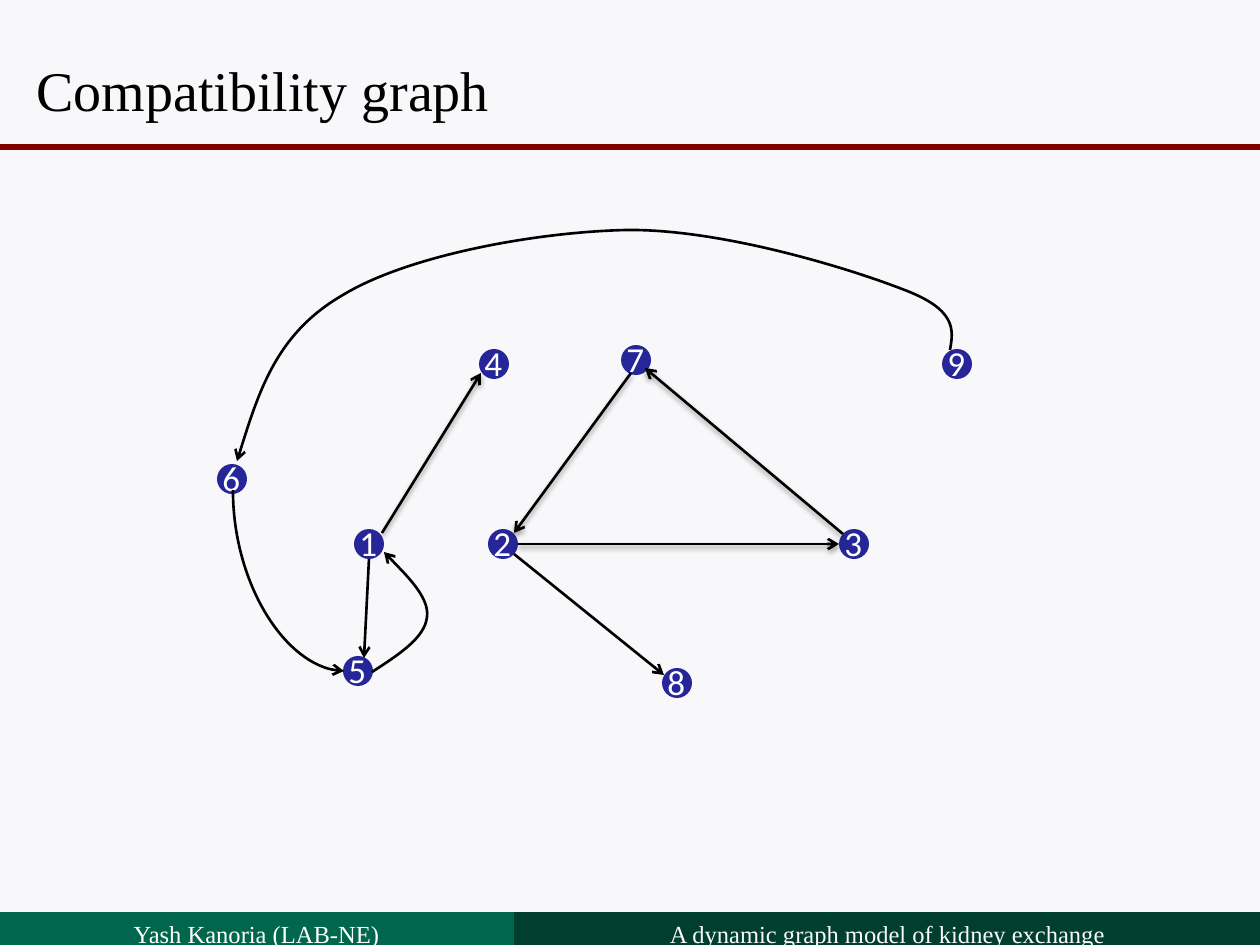
"""Build a slide with the compatibility graph of a kidney exchange."""
from lxml import etree
from pptx import Presentation
from pptx.dml.color import RGBColor
from pptx.enum.shapes import MSO_CONNECTOR, MSO_SHAPE
from pptx.enum.text import MSO_ANCHOR, PP_ALIGN
from pptx.oxml.ns import qn
from pptx.util import Pt

RECTANGLE, OVAL = MSO_SHAPE.RECTANGLE, MSO_SHAPE.OVAL
STRAIGHT, CURVE = MSO_CONNECTOR.STRAIGHT, MSO_CONNECTOR.CURVE
LEFT, CENTER = PP_ALIGN.LEFT, PP_ALIGN.CENTER
TOP, MIDDLE = MSO_ANCHOR.TOP, MSO_ANCHOR.MIDDLE

TITLE = "Compatibility graph"
FOOTERS = [
    ("Yash Kanoria (LAB-NE)", -1, 515, "00664D", "FFFFFF"),
    ("A dynamic graph model of kidney exchange", 514, 747, "003E2F", "FAFAFA"),
]
NODES = {
    "1": (354, 529), "2": (488, 529), "3": (839, 529),
    "4": (479, 349), "5": (343, 656), "6": (217, 464),
    "7": (621, 345), "8": (662, 668), "9": (942, 349),
}
STRAIGHT_EDGES = [
    ((382, 533), (481, 373), True),
    ((631, 373), (514, 533), True),
    ((843, 534), (645, 368), True),
    ((369, 559), (364, 658), False),
    ((518, 544), (839, 544), True),
    ((514, 554), (664, 675), False),
]
BENT_EDGE = ((198, 525), (379, 636))
BEZIER_EDGES = [
    [(950, 350), (954, 329), (956, 309), (902, 289),
     (848, 268), (721, 229), (627, 230),
     (534, 232), (407, 256), (343, 295),
     (277, 333), (257, 397), (237, 461)],
    [(372, 672), (398, 655), (425, 638), (427, 617),
     (430, 597), (384, 552), (384, 552)],
]
THEME = {
    "background": "F8F8FA", "ink": "000000", "rule": "800000",
    "node": "262699", "node_text": "FFFFFF",
    "serif": "Times New Roman", "sans": "Calibri",
    "title_size": 32, "footer_size": 14, "node_size": 20,
    "rule_width": 3, "edge_width": 1.5,
}
WIDTH, HEIGHT = 1260, 945
NODE_SIZE = 30
PX = 914400 / 126


def emu(*lengths):
    return [round(length * PX) for length in lengths]


def color(code):
    return RGBColor.from_string(code)


def write(shape, text, font, size, ink, align=LEFT, anchor=TOP):
    frame = shape.text_frame
    frame.word_wrap = True
    frame.vertical_anchor = anchor
    paragraph = frame.paragraphs[0]
    paragraph.alignment = align
    run = paragraph.add_run()
    run.text = text
    run.font.name = font
    run.font.size = Pt(size)
    run.font.color.rgb = color(ink)


def add_filled(shapes, kind, box, fill):
    shape = shapes.add_shape(kind, *emu(*box))
    shape.shadow.inherit = False
    shape.fill.solid()
    shape.fill.fore_color.rgb = color(fill)
    shape.line.fill.background()
    return shape


def add_node(slide, label, left, top):
    group = slide.shapes.add_group_shape()
    add_filled(group.shapes, OVAL, (left, top, NODE_SIZE, NODE_SIZE), THEME["node"])
    box = group.shapes.add_textbox(*emu(left - 7, top - 14, 34, 49))
    write(box, label, THEME["sans"], THEME["node_size"], THEME["node_text"])


def style_line(shape, ink, width, arrow=True, shadow=False):
    shape.line.color.rgb = color(ink)
    shape.line.width = Pt(width)
    properties = shape._element.spPr
    if arrow:
        etree.SubElement(properties.find(qn("a:ln")), qn("a:tailEnd"), type="arrow")
    effects = etree.SubElement(properties, qn("a:effectLst"))
    if shadow:
        outer = etree.SubElement(
            effects, qn("a:outerShdw"), blurRad=str(Pt(3.1)), dist=str(Pt(1.6)),
            dir="5400000", rotWithShape="0")
        shade = etree.SubElement(outer, qn("a:srgbClr"), val=THEME["ink"])
        etree.SubElement(shade, qn("a:alpha"), val="38000")


def add_line(slide, kind, start, end, ink=THEME["ink"],
             width=THEME["edge_width"], **effects):
    connector = slide.shapes.add_connector(kind, *emu(*start, *end))
    style_line(connector, ink, width, **effects)
    return connector


def add_bent_edge(slide, start, end):
    properties = add_line(slide, CURVE, start, end)._element.spPr
    properties.find(qn("a:prstGeom")).set("prst", "curvedConnector2")
    transform = properties.find(qn("a:xfrm"))
    transform.set("rot", "16200000")
    transform.set("flipH", "1")


def add_bezier_edge(slide, points):
    builder = slide.shapes.build_freeform(*points[0], scale=PX)
    builder.add_line_segments(points[1:], close=False)
    shape = builder.convert_to_shape()
    shape.fill.background()
    outline = next(shape._element.iter(qn("a:path")))
    segments = outline.findall(qn("a:lnTo"))
    for index in range(0, len(segments), 3):
        curve = etree.SubElement(outline, qn("a:cubicBezTo"))
        for segment in segments[index:index + 3]:
            curve.append(segment[0])
            outline.remove(segment)
    style_line(shape, THEME["ink"], THEME["edge_width"])


def main():
    presentation = Presentation()
    presentation.slide_width, presentation.slide_height = emu(WIDTH, HEIGHT)
    slide = presentation.slides.add_slide(presentation.slide_layouts[5])
    slide.background.fill.solid()
    slide.background.fill.fore_color.rgb = color(THEME["background"])

    title = slide.shapes.title
    title.left, title.top, title.width, title.height = emu(24, 53, 1068, 73)
    write(title, TITLE, THEME["serif"], THEME["title_size"], THEME["ink"], anchor=MIDDLE)

    for text, left, width, fill, ink in FOOTERS:
        footer = add_filled(slide.shapes, RECTANGLE, (left, 912, width, 43), fill)
        write(footer, text, THEME["serif"], THEME["footer_size"], ink,
              align=CENTER, anchor=MIDDLE)
    add_line(slide, STRAIGHT, (0, 147), (WIDTH, 147), ink=THEME["rule"],
             width=THEME["rule_width"], arrow=False)

    for label, (left, top) in NODES.items():
        add_node(slide, label, left, top)
    for start, end, shadow in STRAIGHT_EDGES:
        add_line(slide, STRAIGHT, start, end, shadow=shadow)
    add_bent_edge(slide, *BENT_EDGE)
    for points in BEZIER_EDGES:
        add_bezier_edge(slide, points)
    presentation.save("out.pptx")


if __name__ == "__main__":
    main()
